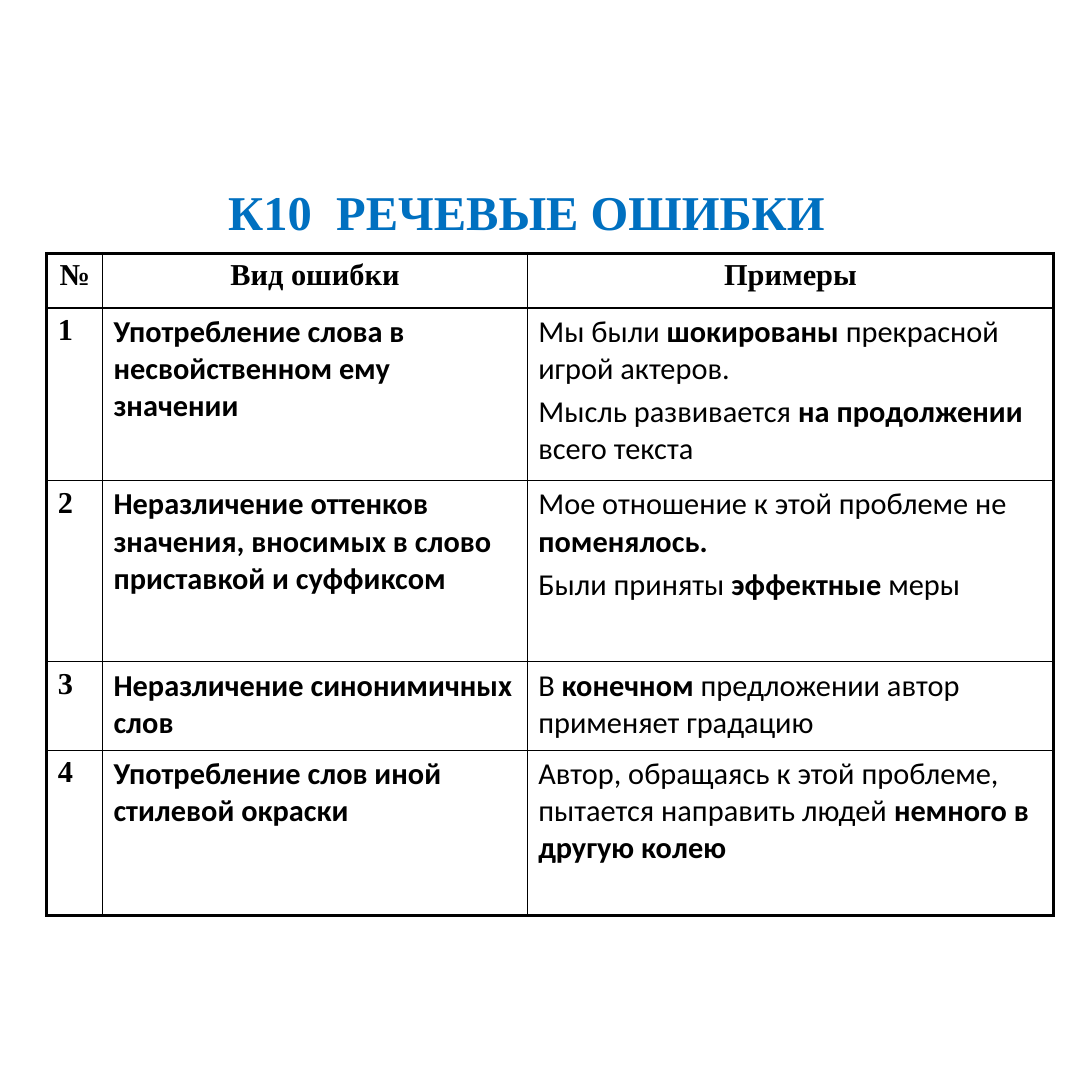
import pptx
import pptx.util
import pptx.dml.color
import pptx.enum.text
import pptx.oxml
import pptx.oxml.ns
from dataclasses import dataclass

Inches = pptx.util.Inches
Pt = pptx.util.Pt
ALIGN = pptx.enum.text.PP_ALIGN
ANCHOR = pptx.enum.text.MSO_ANCHOR


@dataclass(frozen=True)
class Theme:
    blue: str = "0070C0"
    ink: str = "000000"
    serif: str = "Times New Roman"
    sans: str = "Calibri"
    head: float = 32
    body: float = 20
    gap: float = 4
    thick: float = 2.25
    thin: float = 1


HEADS = ["№", "Вид ошибки", "Примеры"]
ERRORS = [
    ("Употребление слова в несвойственном ему значении",
     [[("Мы были ", False), ("шокированы", True), (" прекрасной игрой актеров.", False)],
      [("Мысль развивается ", False), ("на продолжении ", True), ("всего текста", False)]]),
    ("Неразличение оттенков значения, вносимых в слово приставкой и суффиксом",
     [[("Мое отношение к этой проблеме не ", False), ("поменялось.", True)],
      [("Были приняты ", False), ("эффектные ", True), ("меры", False)]]),
    ("Неразличение синонимичных слов",
     [[("В ", False), ("конечном", True), (" предложении автор применяет градацию", False)]]),
    ("Употребление слов иной стилевой окраски",
     [[("Автор, обращаясь к этой проблеме, пытается направить людей ", False),
       ("немного в другую колею", True)]]),
]
WIDTHS = [0.51, 3.89, 4.82]
HEIGHTS = [0.5, 1.58, 1.66, 0.81, 1.51]


class Deck:
    def __init__(self, theme):
        self.theme = theme
        self.show = pptx.Presentation()
        self.show.slide_width = self.show.slide_height = Inches(10)
        self.slide = self.show.slides.add_slide(self.show.slide_layouts[5])

    def add_run(self, para, text, size, face, color, bold):
        run = para.add_run()
        run.text = text
        run.font.size = Pt(size)
        run.font.name = face
        run.font.bold = bold
        run.font.color.rgb = pptx.dml.color.RGBColor.from_string(color)

    def add_title(self, text, left, top, width, height):
        title = self.slide.shapes.title
        title.left, title.top = Inches(left), Inches(top)
        title.width, title.height = Inches(width), Inches(height)
        frame = title.text_frame
        frame.word_wrap = True
        frame.auto_size = pptx.enum.text.MSO_AUTO_SIZE.NONE
        frame.vertical_anchor = ANCHOR.TOP
        frame.margin_left = frame.margin_right = frame.margin_bottom = 0
        frame.margin_top = Inches(0.06)
        para = frame.paragraphs[0]
        para.alignment = ALIGN.LEFT
        self.add_run(para, text, self.theme.head, self.theme.serif, self.theme.blue, True)

    def add_edge(self, cell, side, width):
        line = pptx.oxml.parse_xml(
            f'<a:ln{side} {pptx.oxml.ns.nsdecls("a")} w="{Pt(width)}">'
            f'<a:solidFill><a:srgbClr val="{self.theme.ink}"/></a:solidFill></a:ln{side}>')
        cell._tc.get_or_add_tcPr().append(line)

    def fill_cell(self, cell, paras, face, align):
        frame = cell.text_frame
        for index, runs in enumerate(paras):
            para = frame.add_paragraph() if index else frame.paragraphs[0]
            para.alignment = align
            if index:
                para.space_before = Pt(self.theme.gap)
            for text, bold in runs:
                self.add_run(para, text, self.theme.body, face, self.theme.ink, bold)

    def add_table(self, rows, left, top):
        last_row, last_col = len(HEIGHTS) - 1, len(WIDTHS) - 1
        table = self.slide.shapes.add_table(
            len(HEIGHTS), len(WIDTHS), Inches(left), Inches(top),
            Inches(sum(WIDTHS)), Inches(sum(HEIGHTS))).table
        table.first_row = table.horz_banding = False
        for col, width in zip(table.columns, WIDTHS):
            col.width = Inches(width)
        for row, height in zip(table.rows, HEIGHTS):
            row.height = Inches(height)
        for r, row in enumerate(rows):
            for c, paras in enumerate(row):
                cell = table.cell(r, c)
                face = self.theme.sans if r and c else self.theme.serif
                self.fill_cell(cell, paras, face, ALIGN.LEFT if r else ALIGN.CENTER)
                outer = {"L": c == 0, "R": c == last_col, "T": r == 0, "B": r == last_row}
                for side, edge in outer.items():
                    self.add_edge(cell, side, self.theme.thick if edge else self.theme.thin)
                cell.fill.background()


def main():
    deck = Deck(Theme())
    deck.add_title("К10  РЕЧЕВЫЕ ОШИБКИ", 2.09, 1.61, 7.56, 0.94)
    rows = [[[[(head, True)]] for head in HEADS]]
    for count, (kind, samples) in enumerate(ERRORS, 1):
        rows.append([[[(str(count), True)]], [[(kind, True)]], samples])
    deck.add_table(rows, 0.43, 2.32)
    deck.show.save("out.pptx")


if __name__ == "__main__":
    main()
